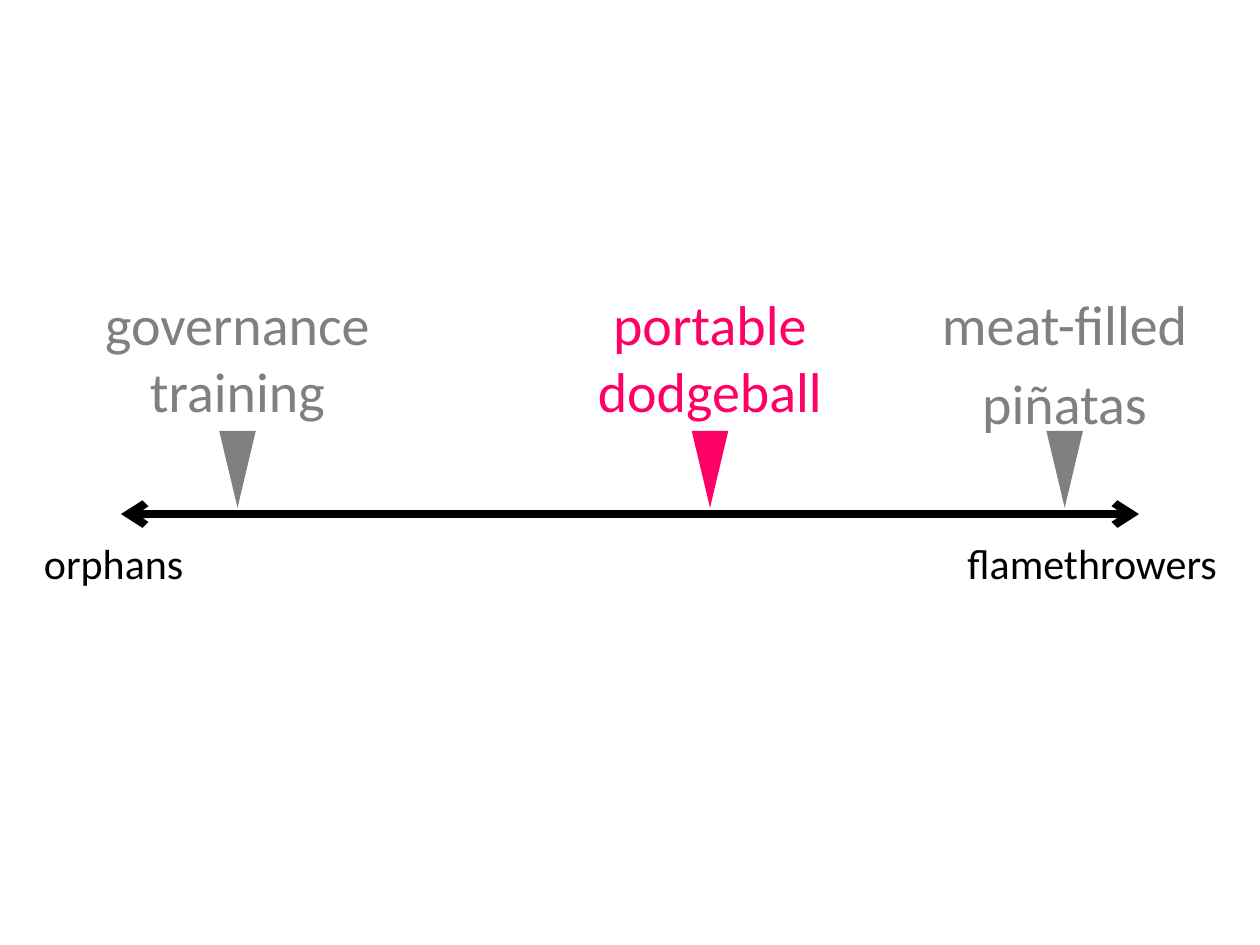
from lxml import etree
from pptx import Presentation
from pptx.dml.color import RGBColor
from pptx.enum.shapes import MSO_CONNECTOR, MSO_SHAPE
from pptx.enum.text import PP_ALIGN
from pptx.oxml.ns import qn
from pptx.util import Inches, Pt

BLACK, PINK, GRAY = "000000", "FF0066", "808080"


def color(hex_value):
    return RGBColor.from_string(hex_value)


def add_label(shapes, text, left, top, width, size, hex_value, align):
    label = shapes.add_textbox(Inches(left), Inches(top), Inches(width), Inches(0.58))
    frame = label.text_frame
    frame.word_wrap = True
    frame.text = text
    for index, paragraph in enumerate(frame.paragraphs):
        paragraph.alignment = align
        paragraph.space_before = Pt(0.2 * size if index else 0)
        for run in paragraph.runs:
            run.font.name = "Calibri"
            run.font.size = Pt(size)
            run.font.color.rgb = color(hex_value)


presentation = Presentation()
presentation.slide_width = Inches(10)
presentation.slide_height = Inches(7.5)
slide = presentation.slides.add_slide(presentation.slide_layouts[6])

# Scale with an arrowhead at each end
scale = slide.shapes.add_connector(
    MSO_CONNECTOR.STRAIGHT, Inches(0.96), Inches(4.08), Inches(9.04), Inches(4.08)
)
scale.line.color.rgb = color(BLACK)
scale.line.width = Pt(4.5)
scale_line = scale.line._get_or_add_ln()
for end in ("a:headEnd", "a:tailEnd"):
    etree.SubElement(scale_line, qn(end), type="arrow")
etree.SubElement(scale._element.spPr, qn("a:effectLst"))

for extreme, left, width in (("orphans", 0.25, 1.42), ("flamethrowers", 7.58, 2.29)):
    add_label(slide.shapes, extreme, left, 4.22, width, 24, BLACK, PP_ALIGN.LEFT)

# Positions on the scale: \v breaks a line, \n starts a paragraph
positions = [
    ("portable\vdodgeball", 5.635, 2.77, PINK),
    ("governance\vtraining", 1.885, 2.6, GRAY),
    ("meat-filled\npiñatas", 8.45, 3.6, GRAY),
]
for topic, center, width, hex_value in positions:
    marker = slide.shapes.add_group_shape()
    add_label(marker.shapes, topic, center - width / 2, 2.25, width, 32,
              hex_value, PP_ALIGN.CENTER)
    pointer = marker.shapes.add_shape(
        MSO_SHAPE.ISOSCELES_TRIANGLE,
        Inches(center - 0.145), Inches(3.42), Inches(0.29), Inches(0.61),
    )
    pointer.rotation = 180
    pointer.shadow.inherit = False
    pointer.fill.solid()
    pointer.fill.fore_color.rgb = color(hex_value)
    pointer.line.fill.background()

presentation.save("out.pptx")
